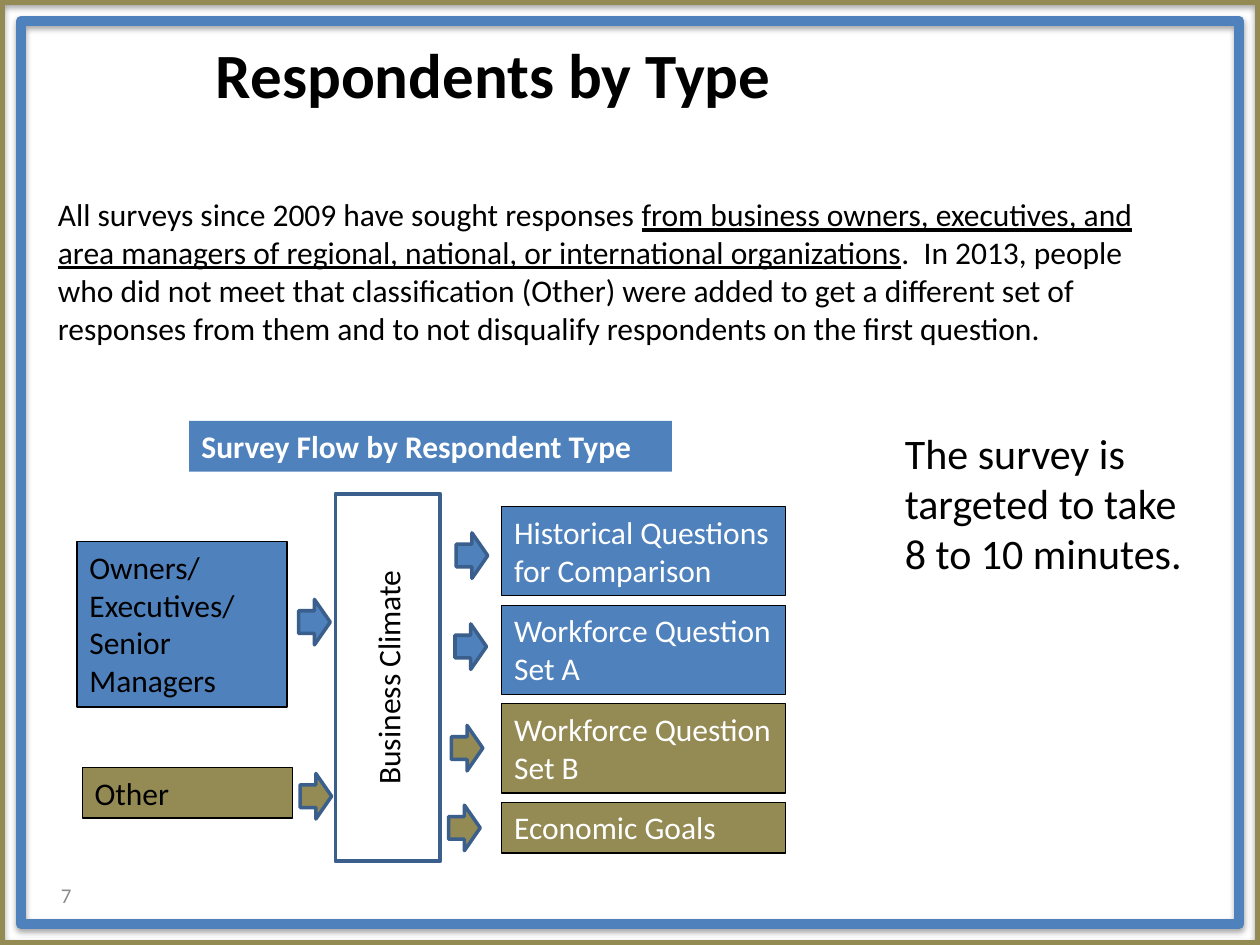
import pptx
import pptx.util
import pptx.dml.color
import pptx.enum.shapes
import pptx.enum.text
import pptx.oxml
import pptx.oxml.ns

Pt = pptx.util.Pt
RGBColor = pptx.dml.color.RGBColor
SHAPE = pptx.enum.shapes.MSO_SHAPE
ALIGN = pptx.enum.text.PP_ALIGN
ANCHOR = pptx.enum.text.MSO_ANCHOR

BLACK = RGBColor(0x00, 0x00, 0x00)
WHITE = RGBColor(0xFF, 0xFF, 0xFF)
GRAY = RGBColor(0x8C, 0x8C, 0x8C)
BLUE = RGBColor(0x4F, 0x81, 0xBD)
DARK_BLUE = RGBColor(0x3A, 0x5F, 0x8C)
OLIVE = RGBColor(0x94, 0x8A, 0x54)
FONT = "Calibri"

FRAME_SHADOW = (
    '<a:effectLst %s><a:outerShdw blurRad="39370" dist="22860" dir="5400000" rotWithShape="0">'
    '<a:srgbClr val="000000"><a:alpha val="35000"/></a:srgbClr></a:outerShdw></a:effectLst>'
    % pptx.oxml.ns.nsdecls("a")
)


def format_text(text_frame, size, color, bold=False, align=ALIGN.LEFT, anchor=ANCHOR.TOP):
    text_frame.word_wrap = True
    text_frame.vertical_anchor = anchor
    for paragraph in text_frame.paragraphs:
        paragraph.alignment = align
        for run in paragraph.runs:
            run.font.name = FONT
            run.font.size = Pt(size)
            run.font.bold = bold
            run.font.color.rgb = color


def add_box(slide, kind, left, top, width, height, fill=None, line=None, line_width=0.75):
    shape = slide.shapes.add_shape(kind, Pt(left), Pt(top), Pt(width), Pt(height))
    shape.shadow.inherit = False
    if fill is None:
        shape.fill.background()
    else:
        shape.fill.solid()
        shape.fill.fore_color.rgb = fill
    if line is None:
        shape.line.fill.background()
    else:
        shape.line.color.rgb = line
        shape.line.width = Pt(line_width)
    return shape


def add_label(slide, text, box, fill, color, line=BLACK, bold=False):
    shape = add_box(slide, SHAPE.RECTANGLE, *box, fill, line)
    shape.text_frame.text = text
    format_text(shape.text_frame, 18, color, bold)


def add_text(slide, text, box, size, color, **style):
    text_box = slide.shapes.add_textbox(*map(Pt, box))
    text_box.text_frame.text = text
    format_text(text_box.text_frame, size, color, **style)


def add_frames(slide, left, top, width, height):
    for inset, color in ((0, OLIVE), (12, BLUE)):
        frame = add_box(slide, SHAPE.RECTANGLE, left + inset, top + inset,
                        width - 2 * inset, height - 2 * inset, line=color, line_width=6)
        properties = frame.element.spPr
        properties.remove(properties.find(pptx.oxml.ns.qn("a:effectLst")))
        properties.append(pptx.oxml.parse_xml(FRAME_SHADOW))


def add_title(slide, left, top, width, height):
    title = slide.shapes.title
    title.left, title.top, title.width, title.height = map(Pt, (left, top, width, height))
    title.text_frame.text = "Respondents by Type"
    format_text(title.text_frame, 36, BLACK, True, ALIGN.CENTER, ANCHOR.MIDDLE)


def add_introduction(slide, left, top, width, height):
    text_box = slide.shapes.add_textbox(Pt(left), Pt(top), Pt(width), Pt(height))
    paragraph = text_box.text_frame.paragraphs[0]
    parts = (
        ("All surveys since 2009 have sought responses ", False),
        ("from business owners, executives, and area managers of regional, national, "
         "or international organizations", True),
        (".  In 2013, people who did not meet that classification (Other) were added to get "
         "a different set of responses from them and to not disqualify respondents on the "
         "first question.", False),
    )
    for text, underlined in parts:
        run = paragraph.add_run()
        run.text = text
        run.font.underline = underlined
    format_text(text_box.text_frame, 18, BLACK)


def add_survey_flow(slide, left, top, width, height):
    add_label(slide, "Survey Flow by Respondent Type", (left + 64, top, 276, 29),
              BLUE, WHITE, line=None, bold=True)

    climate = add_box(slide, SHAPE.RECTANGLE, left + 147.6, top + height - 210, 60, 210,
                      WHITE, DARK_BLUE, 2)
    climate.text_frame.text = "Business Climate"
    format_text(climate.text_frame, 18, BLACK, align=ALIGN.CENTER, anchor=ANCHOR.MIDDLE)
    climate.text_frame._txBody.bodyPr.set("vert", "vert270")

    respondents = (
        ("Owners/ Executives/ Senior Managers", 0, 69, 94.5, BLUE),
        ("Other", 3, 198, 29, OLIVE),
    )
    for text, x, y, box_height, fill in respondents:
        add_label(slide, text, (left + x, top + y, 120, box_height), fill, BLACK)

    question_width, question_step = 162, 56.3
    questions = (
        ("Historical Questions for Comparison", 51, BLUE),
        ("Workforce Question Set A", 51, BLUE),
        ("Workforce Question Set B", 51, OLIVE),
        ("Economic Goals", 29, OLIVE),
    )
    for index, (text, box_height, fill) in enumerate(questions):
        box = (left + width - question_width, top + 49 + index * question_step,
               question_width, box_height)
        add_label(slide, text, box, fill, WHITE)

    arrows = (
        (126.7, 102, BLUE), (127.5, 201.5, OLIVE),
        (216.7, 64, BLUE), (216, 116, BLUE), (213.9, 174, OLIVE), (212.4, 219.6, OLIVE),
    )
    for x, y, fill in arrows:
        add_box(slide, SHAPE.RIGHT_ARROW, left + x, top + y, 18, 26, fill, DARK_BLUE, 2)


def main():
    presentation = pptx.Presentation()
    presentation.slide_width, presentation.slide_height = Pt(720), Pt(540)
    slide = presentation.slides.add_slide(presentation.slide_layouts[5])
    add_frames(slide, 0, 0, 720, 540)
    add_title(slide, 18, 15, 528, 54)
    add_introduction(slide, 26, 108, 646.5, 94.5)
    add_survey_flow(slide, 44, 240.5, 404.7, 251.7)
    add_text(slide, "The survey is targeted to take 8 to 10 minutes.",
             (510, 240.5, 174, 94.5), 24, BLACK)
    add_text(slide, "7", (6, 498, 42, 27), 12, GRAY, align=ALIGN.RIGHT, anchor=ANCHOR.MIDDLE)
    presentation.save("out.pptx")


if __name__ == "__main__":
    main()
